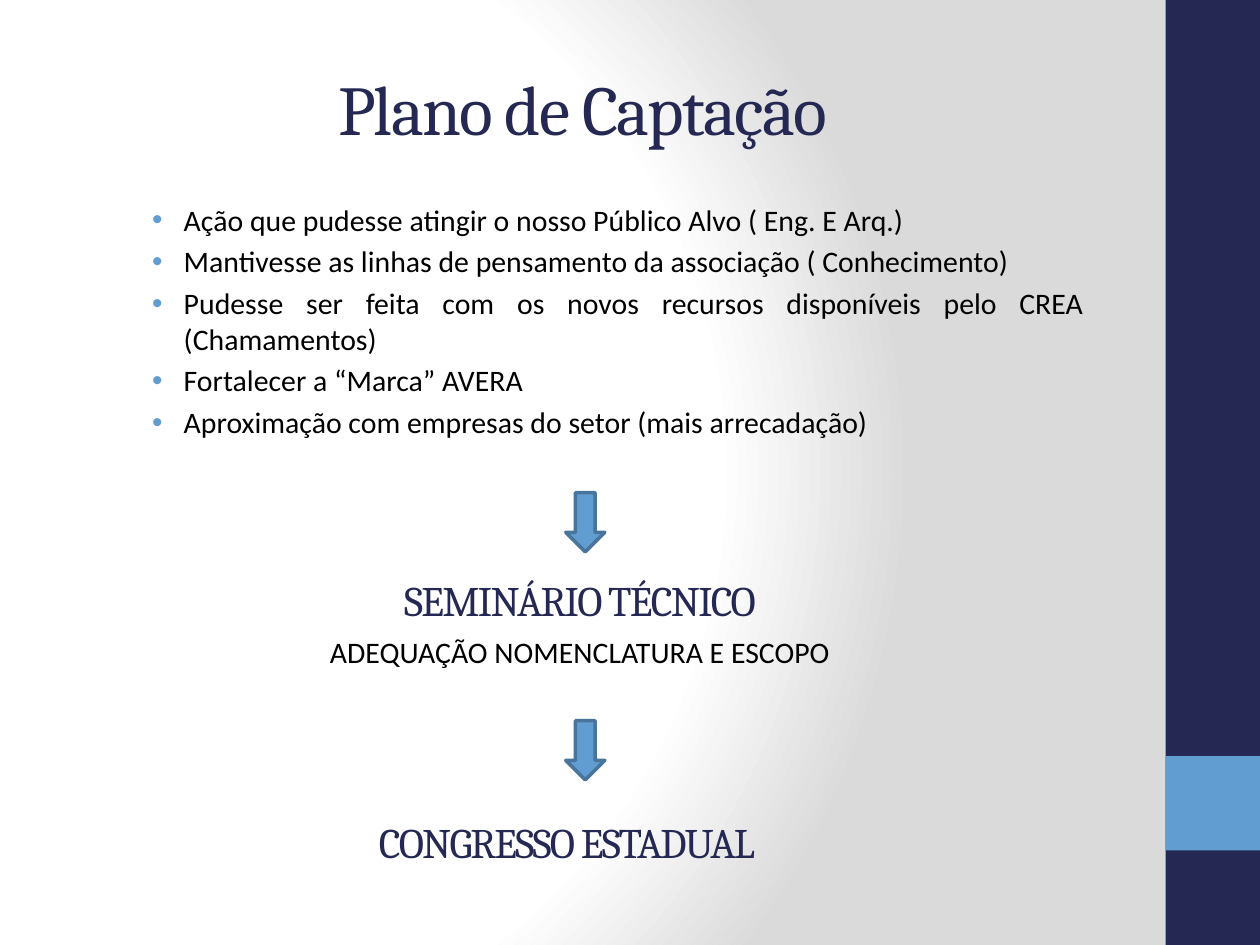
from dataclasses import dataclass

from pptx import Presentation
from pptx.dml.color import RGBColor
from pptx.enum.shapes import MSO_SHAPE
from pptx.enum.text import MSO_ANCHOR, MSO_AUTO_SIZE, PP_ALIGN
from pptx.oxml import parse_xml
from pptx.oxml.ns import nsdecls
from pptx.util import Inches, Pt

RECT, ARROW = MSO_SHAPE.RECTANGLE, MSO_SHAPE.DOWN_ARROW
TOP, MIDDLE = MSO_ANCHOR.TOP, MSO_ANCHOR.MIDDLE
LEFT, CENTER, JUST = PP_ALIGN.LEFT, PP_ALIGN.CENTER, PP_ALIGN.JUSTIFY
FIXED = MSO_AUTO_SIZE.NONE
WIDE, HIGH = Inches(10), Inches(7.5)
COLS, ROWS = 40, 30


@dataclass(frozen=True)
class Theme:
    navy: str = "242852"
    blue: str = "629DD1"
    edge: str = "49749B"
    black: str = "000000"
    white: str = "FFFFFF"
    gray: str = "DADADA"
    serif: str = "Cambria"
    sans: str = "Calibri"
    title: int = 40
    head: int = 24
    body: int = 17


THEME = Theme()

GOALS = [
    "Ação que pudesse atingir o nosso Público Alvo ( Eng. E Arq.)",
    "Mantivesse as linhas de pensamento da associação ( Conhecimento)",
    "Pudesse ser feita com os novos recursos disponíveis pelo CREA (Chamamentos)",
    "Fortalecer a “Marca” AVERA",
    "Aproximação com empresas do setor (mais arrecadação)",
]


def grid(col, row, cols, rows):
    return [round(WIDE * col / COLS), round(HIGH * row / ROWS),
            round(WIDE * cols / COLS), round(HIGH * rows / ROWS)]


def paint(slide):
    stops = [(0, THEME.white), (75, THEME.white), (100, THEME.gray)]
    marks = "".join(
        f'<a:gs pos="{pos * 1000}"><a:srgbClr val="{tint}"/></a:gs>'
        for pos, tint in stops)
    back = parse_xml(
        f'<p:bg {nsdecls("p", "a")}><p:bgPr><a:gradFill rotWithShape="1">'
        f'<a:gsLst>{marks}</a:gsLst><a:path path="circle">'
        '<a:fillToRect l="20000" t="50000" r="100000" b="50000"/></a:path>'
        '</a:gradFill><a:effectLst/></p:bgPr></p:bg>')
    slide.element.cSld.insert(0, back)


def add_block(slide, kind, box, fill, edge=None):
    block = slide.shapes.add_shape(kind, *grid(*box))
    block.shadow.inherit = False
    block.fill.solid()
    block.fill.fore_color.rgb = RGBColor.from_string(fill)
    if edge:
        block.line.color.rgb = RGBColor.from_string(edge)
        block.line.width = Pt(2)
    else:
        block.line.fill.background()


def set_font(para, face, size, tint):
    for run in para.runs:
        run.font.name = face
        run.font.size = Pt(size)
        run.font.color.rgb = RGBColor.from_string(tint)


def set_head(shape, text, size, align):
    frame = shape.text_frame
    frame.text = text
    frame.word_wrap = True
    frame.auto_size = FIXED
    frame.vertical_anchor = MIDDLE
    para = frame.paragraphs[0]
    para.alignment = align
    set_font(para, THEME.serif, size, THEME.navy)
    para.runs[0].font._element.set("spc", "-100")


def add_title(slide, box, text):
    title = slide.shapes.title
    title.left, title.top, title.width, title.height = grid(*box)
    set_head(title, text, THEME.title, CENTER)


def add_head(slide, box, text):
    set_head(slide.shapes.add_textbox(*grid(*box)), text, THEME.head, LEFT)


def add_bullet(props):
    for mark in (
        f'<a:buClr {nsdecls("a")}><a:srgbClr val="{THEME.blue}"/></a:buClr>',
        f'<a:buFont {nsdecls("a")} typeface="Arial"/>',
        f'<a:buChar {nsdecls("a")} char="•"/>',
    ):
        props.append(parse_xml(mark))


def add_body(slide, box, lines, indent, hang=0):
    frame = slide.shapes.add_textbox(*grid(*box)).text_frame
    frame.word_wrap = True
    frame.vertical_anchor = TOP
    frame.text = "\n".join(lines)
    for para in frame.paragraphs:
        para.alignment = JUST
        para.space_before = Pt(THEME.body * 0.2)
        set_font(para, THEME.sans, THEME.body, THEME.black)
        props = para._p.get_or_add_pPr()
        props.set("marL", str(Inches(indent)))
        props.set("indent", str(Inches(-hang)))
        if hang:
            add_bullet(props)


def main():
    deck = Presentation()
    deck.slide_width, deck.slide_height = WIDE, HIGH
    slide = deck.slides.add_slide(deck.slide_layouts[5])
    paint(slide)
    add_block(slide, RECT, (37, 0, 3, ROWS), THEME.navy)
    add_block(slide, RECT, (37, 24, 3, 3), THEME.blue)
    add_title(slide, (0, 2.2, 37, 2.4), "Plano de Captação")
    add_body(slide, (3.92, 6.2, 30.88, 6.76), GOALS, 0.38, 0.25)
    for row in (15.64, 22.88):
        add_block(slide, ARROW, (17.96, row, 1.24, 1.88), THEME.blue, THEME.edge)
    add_head(slide, (12.44, 17.84, 13.84, 2.4), "SEMINÁRIO TÉCNICO")
    add_body(slide, (9.6, 19.92, 17.64, 1.72),
             ["ADEQUAÇÃO NOMENCLATURA E ESCOPO"], 0.12)
    add_head(slide, (11.64, 25.52, 13.84, 2.4), "CONGRESSO ESTADUAL")
    deck.save("out.pptx")


if __name__ == "__main__":
    main()
